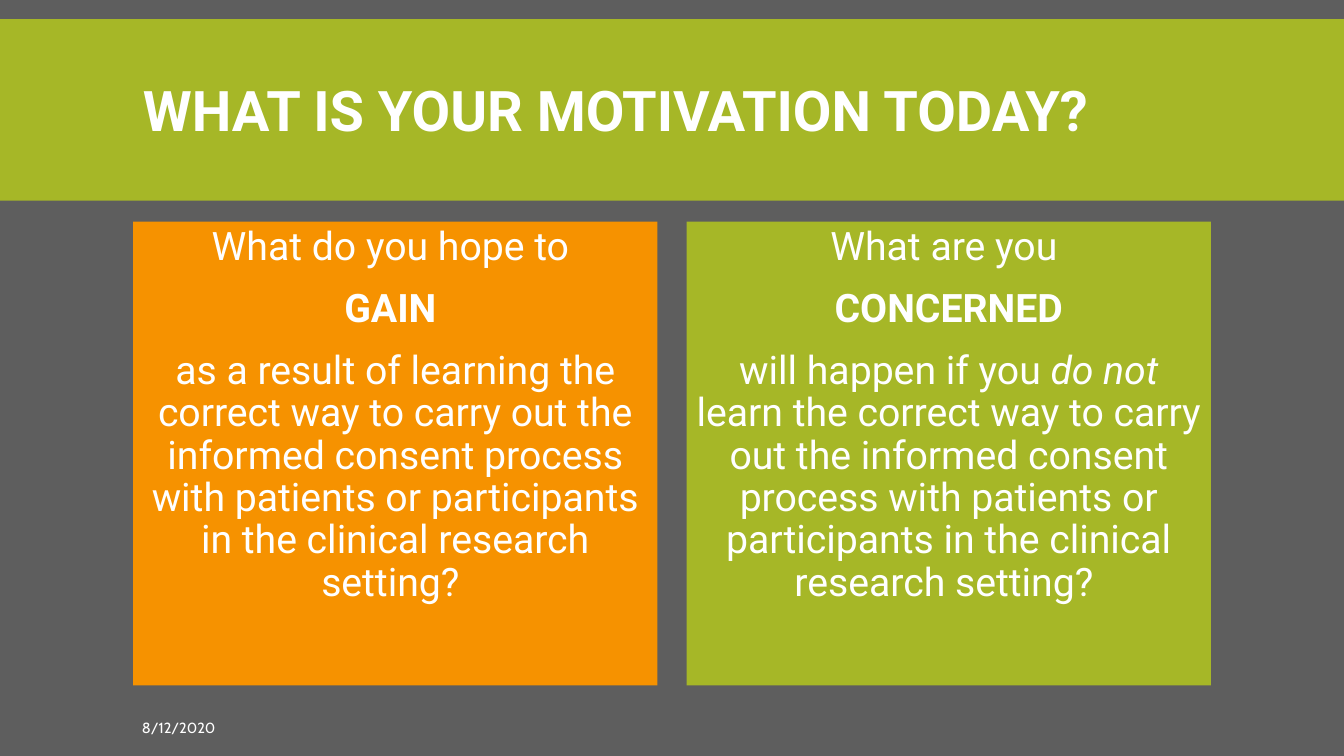
import pptx
import pptx.dml.color
import pptx.enum.shapes
import pptx.enum.text
import pptx.util

Inches = pptx.util.Inches
Pt = pptx.util.Pt
ALIGN = pptx.enum.text.PP_ALIGN
ANCHOR = pptx.enum.text.MSO_ANCHOR

COLORS = {"backdrop": "5E5E5E", "green": "A6B727", "orange": "F69200", "text": "FFFFFF"}

# Each question is a list of paragraphs; each paragraph is a list of (text, style) runs.
GAIN_QUESTION = [
    [("What do you hope to ", {})],
    [("GAIN ", {"bold": True})],
    [("as a result of learning the correct way to carry out the informed consent "
      "process with patients or participants in the clinical research setting? ", {})],
]
CONCERN_QUESTION = [
    [("What are you ", {})],
    [(" ", {}), ("CONCERNED ", {"bold": True})],
    [("will happen if you ", {}),
     ("do not ", {"italic": True}),
     ("learn the correct way to carry out the informed consent process with "
      "patients or participants in the clinical research setting? ", {})],
]


def rgb(name):
    return pptx.dml.color.RGBColor.from_string(COLORS[name])


def set_attributes(target, values):
    for name, value in values.items():
        setattr(target, name, value)


def add_panel(slide, left, top, width, height, color):
    panel = slide.shapes.add_shape(
        pptx.enum.shapes.MSO_SHAPE.RECTANGLE,
        Inches(left), Inches(top), Inches(width), Inches(height))
    panel.shadow.inherit = False
    panel.fill.solid()
    panel.fill.fore_color.rgb = rgb(color)
    panel.line.fill.background()
    return panel


def write_text(frame, paragraphs, font, frame_format, paragraph_format):
    set_attributes(frame, {"word_wrap": True, **frame_format})
    for index, runs in enumerate(paragraphs):
        paragraph = frame.paragraphs[0] if index == 0 else frame.add_paragraph()
        set_attributes(paragraph, paragraph_format)
        for text, style in runs:
            run = paragraph.add_run()
            run.text = text
            set_attributes(run.font, {**font, **style})
            run.font.color.rgb = rgb("text")


def add_label(slide, left, top, width, height, text, font, frame_format, paragraph_format):
    label = slide.shapes.add_textbox(
        Inches(left), Inches(top), Inches(width), Inches(height))
    write_text(label.text_frame, [[(text, {})]], font,
               {"vertical_anchor": ANCHOR.MIDDLE, **frame_format}, paragraph_format)


def add_question(slide, left, color, paragraphs):
    panel = add_panel(slide, left, 2.2, 5.2, 4.6, color)
    write_text(panel.text_frame, paragraphs,
               {"name": "Roboto", "size": Pt(28)},
               {"vertical_anchor": ANCHOR.TOP},
               {"alignment": ALIGN.CENTER, "line_spacing": 0.9,
                "space_before": Pt(12), "space_after": Pt(2)})


def main():
    deck = pptx.Presentation()
    set_attributes(deck, {"slide_width": Inches(13.33), "slide_height": Inches(7.5)})
    slide = deck.slides.add_slide(deck.slide_layouts[6])
    slide.background.fill.solid()
    slide.background.fill.fore_color.rgb = rgb("backdrop")

    # Title band
    add_panel(slide, 0, 0.19, 13.33, 1.8, "green")
    add_label(slide, 1.32, 0.31, 10.7, 1.65, "WHAT IS YOUR MOTIVATION TODAY?",
              {"name": "Roboto", "size": Pt(40), "bold": True},
              {}, {"line_spacing": 0.85})

    # Two questions side by side
    add_question(slide, 1.32, "orange", GAIN_QUESTION)
    add_question(slide, 6.81, "green", CONCERN_QUESTION)

    # Date
    add_label(slide, 1.31, 7.02, 3.28, 0.4, "8/12/2020",
              {"name": "Cabin", "size": Pt(10.5)},
              {"margin_left": Inches(0.1), "margin_right": Inches(0.05)}, {})

    deck.save("out.pptx")


if __name__ == "__main__":
    main()
